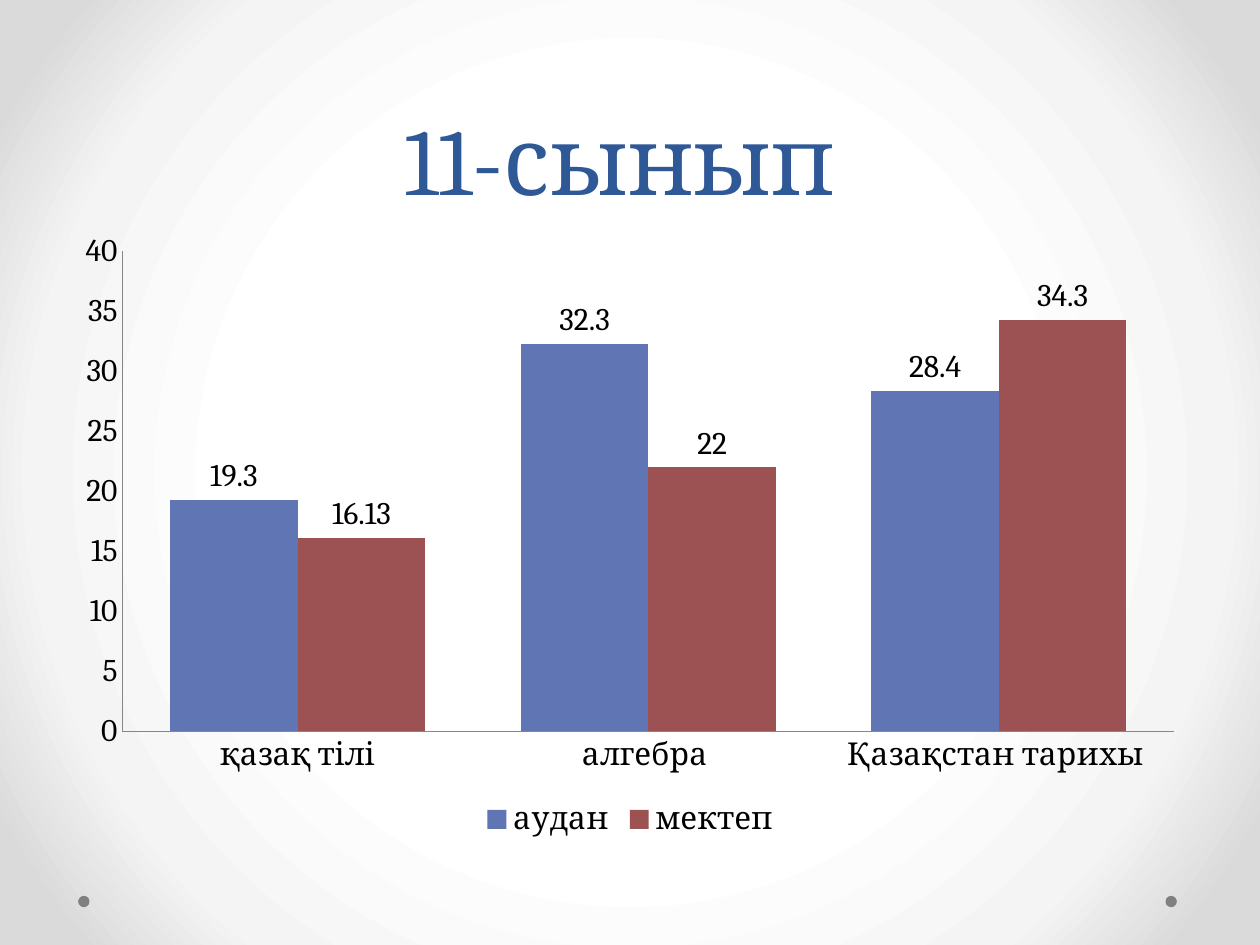
from dataclasses import dataclass

from pptx import Presentation
from pptx.chart.data import CategoryChartData
from pptx.dml.color import RGBColor
from pptx.enum.chart import XL_CHART_TYPE as ChartType, XL_LABEL_POSITION as LabelPos
from pptx.enum.chart import XL_LEGEND_POSITION as LegendPos, XL_TICK_MARK as TickMark
from pptx.enum.shapes import MSO_SHAPE as Preset
from pptx.enum.text import MSO_ANCHOR as Anchor, PP_ALIGN as Align
from pptx.oxml import parse_xml
from pptx.oxml.ns import nsdecls, qn
from pptx.slide import Slide
from pptx.util import Inches, Pt


@dataclass(frozen=True)
class Theme:
    font: str = "Cambria"
    title_size: int = 54
    title_leading: int = 58
    chart_size: int = 18
    title: str = "2F5897"
    text: str = "000000"
    axis: str = "868686"
    dot: str = "808080"
    glow: tuple = ((50, "FFFFFF"), (76, "F4F4F4"), (92, "DADADA"))


@dataclass(frozen=True)
class Results:
    name: str
    scores: tuple
    color: str


@dataclass(frozen=True)
class Box:
    left: float
    top: float
    width: float
    height: float

    def lengths(self) -> tuple:
        return tuple(map(Inches, (self.left, self.top, self.width, self.height)))


THEME = Theme()
WIDTH, HEIGHT = 10, 7.5
MARGIN = WIDTH / 20
HEADING_HEIGHT = 1.75
DOT = 0.09
SUBJECTS = ("қазақ тілі", "алгебра ", "Қазақстан тарихы ")
RESULTS = (
    Results("аудан", (19.3, 32.3, 28.4), "6076B4"),
    Results("мектеп", (16.13, 22, 34.3), "9C5252"),
)


def rgb(color: str) -> RGBColor:
    return RGBColor.from_string(color)


def paint_background(slide: Slide) -> None:
    slide.background.fill.gradient()
    linear = slide.element.find(".//" + qn("a:gradFill"))
    stops = "".join(
        f'<a:gs pos="{share * 1000}"><a:srgbClr val="{color}"/></a:gs>'
        for share, color in THEME.glow
    )
    radial = parse_xml(
        f'<a:gradFill {nsdecls("a")} rotWithShape="1"><a:gsLst>{stops}</a:gsLst>'
        '<a:path path="circle"><a:fillToRect l="50000" t="50000" r="50000" b="50000"/>'
        "</a:path></a:gradFill>"
    )
    linear.getparent().replace(linear, radial)


def add_dot(slide: Slide, left: float) -> None:
    dot = slide.shapes.add_shape(Preset.OVAL, *Box(left, 7.11, DOT, DOT).lengths())
    dot.shadow.inherit = False
    dot.fill.solid()
    dot.fill.fore_color.rgb = rgb(THEME.dot)
    dot.line.fill.background()


def add_heading(slide: Slide, wording: str, box: Box) -> None:
    frame = slide.shapes.add_textbox(*box.lengths()).text_frame
    frame.word_wrap = True
    frame.vertical_anchor = Anchor.BOTTOM
    frame.text = wording
    heading = frame.paragraphs[0]
    heading.alignment = Align.CENTER
    heading.line_spacing = Pt(THEME.title_leading)
    font = heading.runs[0].font
    font.name = THEME.font
    font.size = Pt(THEME.title_size)
    font.color.rgb = rgb(THEME.title)


def add_results_chart(slide: Slide, box: Box) -> None:
    scores = CategoryChartData()
    scores.categories = SUBJECTS
    for group in RESULTS:
        scores.add_series(group.name, group.scores)
    chart = slide.shapes.add_chart(
        ChartType.COLUMN_CLUSTERED, *box.lengths(), scores
    ).chart
    chart.has_title = False
    chart.font.name = THEME.font
    chart.font.size = Pt(THEME.chart_size)
    chart.font.color.rgb = rgb(THEME.text)
    chart.has_legend = True
    chart.legend.position = LegendPos.BOTTOM
    chart.legend.include_in_layout = False

    for axis in (chart.category_axis, chart.value_axis):
        axis.has_major_gridlines = False
        axis.major_tick_mark = TickMark.NONE
        axis.minor_tick_mark = TickMark.NONE
        axis.format.line.color.rgb = rgb(THEME.axis)
        axis.format.line.width = Pt(0.75)

    columns = chart.plots[0]
    columns.gap_width = 75
    columns.overlap = 0
    columns.vary_by_categories = False
    for series, group in zip(columns.series, RESULTS):
        series.format.fill.solid()
        series.format.fill.fore_color.rgb = rgb(group.color)
        series.data_labels.show_value = True
        series.data_labels.position = LabelPos.OUTSIDE_END


def main() -> None:
    deck = Presentation()
    deck.slide_width, deck.slide_height = Inches(WIDTH), Inches(HEIGHT)
    slide = deck.slides.add_slide(deck.slide_layouts[6])
    content_width = WIDTH - 2 * MARGIN
    paint_background(slide)
    for left in (9.25, 0.62):
        add_dot(slide, left)
    add_heading(slide, "11-сынып ", Box(MARGIN, 0, content_width, HEADING_HEIGHT))
    add_results_chart(slide, Box(MARGIN, HEADING_HEIGHT, content_width, HEIGHT * 0.66))
    deck.save("out.pptx")


if __name__ == "__main__":
    main()
